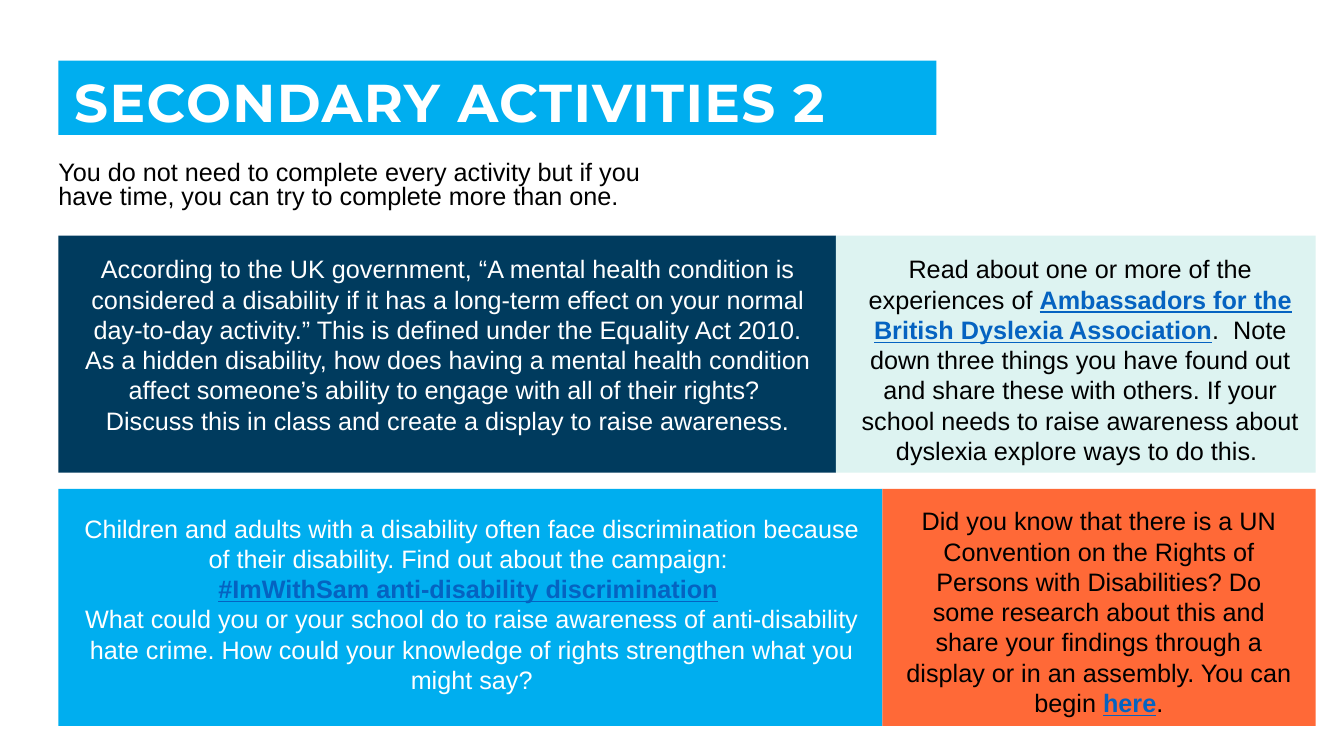
from pptx import Presentation
from pptx import util as u
from pptx.dml.color import RGBColor
from pptx.enum import shapes, text

HUES = {"sky": "00AEEF", "navy": "003B5E", "mint": "DDF3F1", "coral": "FF6937",
        "link": "0563C1", "white": "FFFFFF", "black": "000000"}
LEFT, RIGHT = 1.47, 33.15
HIGH = 5.97


class Deck:
    def __init__(self):
        self.prs = Presentation()
        self.prs.slide_width, self.prs.slide_height = u.Cm(33.86), u.Cm(19.05)
        self.slide = self.prs.slides.add_slide(self.prs.slide_layouts[6])

    def hue(self, name):
        return RGBColor.from_string(HUES[name])

    def rect(self, box, fill):
        shape = self.slide.shapes.add_shape(
            shapes.MSO_SHAPE.RECTANGLE, *map(u.Cm, box))
        shape.shadow.inherit = False
        shape.fill.solid()
        shape.fill.fore_color.rgb = self.hue(fill)
        shape.line.fill.background()
        return shape

    def label(self, box):
        return self.slide.shapes.add_textbox(*map(u.Cm, box))

    def pad(self, shape, left, top, right, low):
        frame = shape.text_frame
        frame.margin_left, frame.margin_top = u.Cm(left), u.Cm(top)
        frame.margin_right, frame.margin_bottom = u.Cm(right), u.Cm(low)

    def put(self, shape, paras, ink, size=18, face="Arial", align="CENTER", gap=1.0):
        """Fill a shape with paragraphs of runs; a run in a tuple is a link."""
        frame = shape.text_frame
        frame.word_wrap = True
        for i, runs in enumerate(paras):
            para = frame.paragraphs[0] if i == 0 else frame.add_paragraph()
            para.alignment = text.PP_ALIGN[align]
            para.line_spacing = gap
            para.font.size, para.font.name = u.Pt(size), face
            para.font.color.rgb = self.hue(ink)
            for part in runs:
                link = isinstance(part, tuple)
                run = para.add_run()
                run.text = part[0] if link else part
                font = run.font
                font.size, font.name = u.Pt(size), face
                font.color.rgb = self.hue("link" if link else ink)
                if link:
                    font.bold = font.underline = True

    def title(self, box, words):
        shape = self.rect(box, "sky")
        self.pad(shape, 0.4, 0.4, 0.3, 0)
        shape.text_frame.vertical_anchor = text.MSO_ANCHOR.MIDDLE
        self.put(shape, [[words]], "white", 38, "Montserrat", "LEFT", 0.9)
        run = shape.text_frame.paragraphs[0].runs[0]
        run.font.bold = True
        run._r.get_or_add_rPr().set("spc", "100")

    def intro(self, box, words):
        shape = self.label(box)
        self.pad(shape, 0, 0.13, 0.25, 0.13)
        self.put(shape, [[words]], "black", align="LEFT", gap=0.8)


# Each row: top, split between its two cards, then fill, ink, text box and text
ROWS = [
    (5.94, 21.06, [
        ("navy", "white", (1.83, 6.27, 18.9, 5.64), [[
            "According to the UK government, “A mental health condition is considered "
            "a disability if it has a long-term effect on your normal day-to-day "
            "activity.” This is defined under the Equality Act 2010. As a hidden "
            "disability, how does having a mental health condition affect someone’s "
            "ability to engage with all of their rights?  Discuss this in class and "
            "create a display to raise awareness."]]),
        ("mint", "black", (21.41, 6.27, 11.61, 5.64), [[
            "Read about one or more of the experiences of ",
            ("Ambassadors for the British Dyslexia Association",),
            ".  Note down three things you have found out and share these with "
            "others. If your school needs to raise awareness about dyslexia explore "
            "ways to do this. "]]),
    ]),
    (12.32, 22.23, [
        ("sky", "white", (1.85, 12.8, 20.07, 4.88), [
            ["Children and adults with a disability often face discrimination "
             "because of their disability. Find out about the campaign: "],
            [("#ImWithSam anti-disability discrimination",), " "],
            ["What could you or your school do to raise awareness of "
             "anti-disability hate crime. How could your knowledge of rights "
             "strengthen what you might say?"]]),
        ("coral", "black", (22.53, 12.62, 10.31, 5.64), [[
            "Did you know that there is a UN Convention on the Rights of Persons "
            "with Disabilities? Do some research about this and share your findings "
            "through a display or in an assembly. You can begin ",
            ("here",), "."]]),
    ]),
]


def main():
    deck = Deck()
    deck.intro((LEFT, 3.96, 15.77, 1.57),
               "You do not need to complete every activity but if you have time, "
               "you can try to complete more than one.")
    deck.title((LEFT, 1.53, 22.12, 1.87), "SECONDARY ACTIVITIES 2")
    for top, split, cards in ROWS:
        spans = [(LEFT, split), (split, RIGHT)]
        for (start, end), (fill, ink, box, paras) in zip(spans, cards):
            deck.rect((start, top, end - start, HIGH), fill)
            deck.put(deck.label(box), paras, ink)
    deck.prs.save("out.pptx")


if __name__ == "__main__":
    main()
